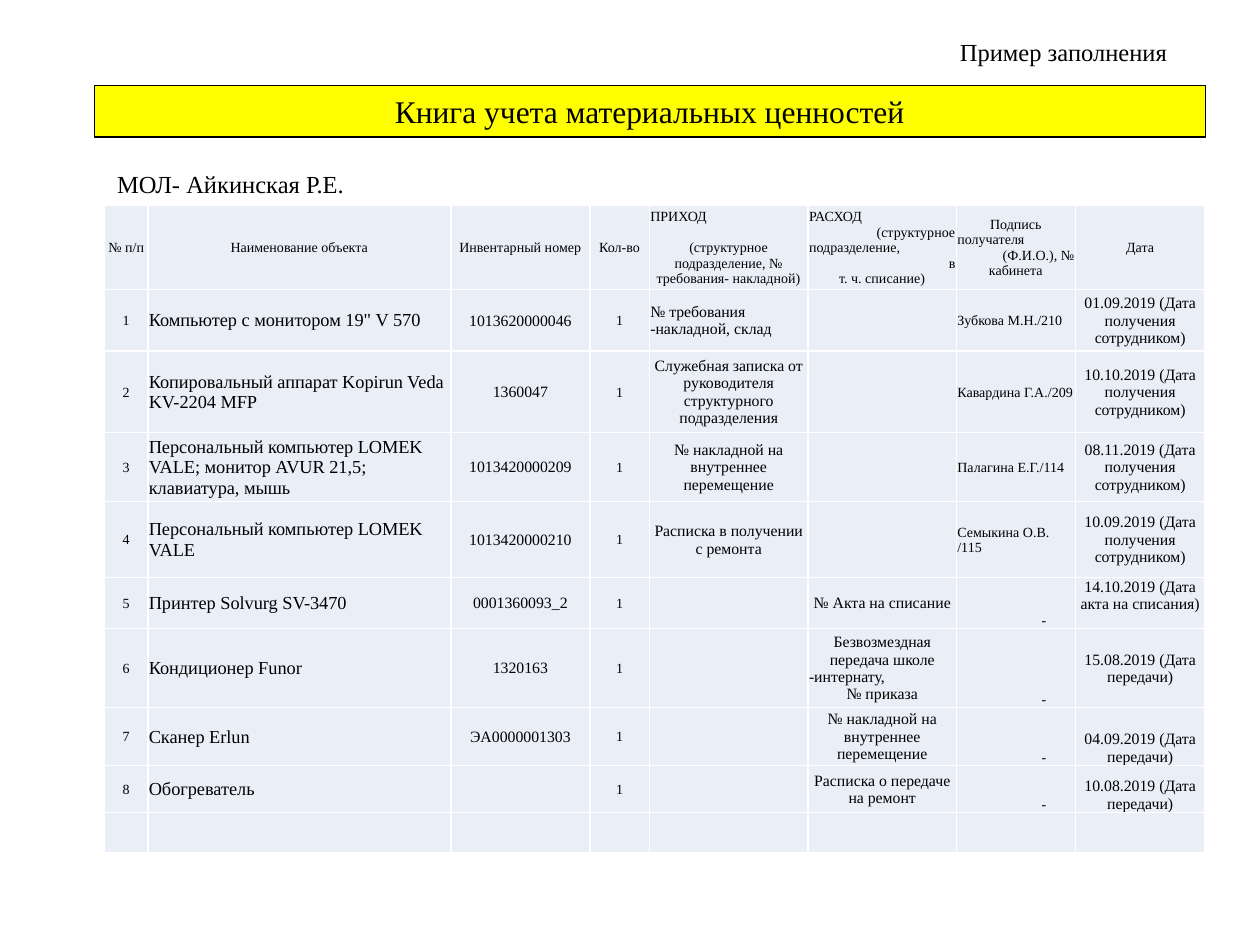
from lxml import etree
from pptx import Presentation
from pptx.dml.color import RGBColor
from pptx.enum.text import MSO_ANCHOR, MSO_AUTO_SIZE, PP_ALIGN
from pptx.oxml.ns import qn
from pptx.util import Cm, Pt

LEFT, MID, RIGHT = PP_ALIGN.LEFT, PP_ALIGN.CENTER, PP_ALIGN.RIGHT
TOP, CENTER, BOTTOM = MSO_ANCHOR.TOP, MSO_ANCHOR.MIDDLE, MSO_ANCHOR.BOTTOM
GROW, FIXED = MSO_AUTO_SIZE.SHAPE_TO_FIT_TEXT, MSO_AUTO_SIZE.NONE

# A leading mark sets the side of a line: "<" left, ">" right
SIDES = {"<": LEFT, ">": RIGHT}

COLS = [0.87, 6.11, 2.8, 1.2, 3.2, 2.99, 2.4, 2.61]
ROWS = [1.7, 1.23, 1.65, 1.39, 1.53, 1.03, 1.59, 1.17, 0.95, 0.81]
SIZES = [8, 10.5, 9, 8, 9, 9, 8, 9]
ALIGNS = [MID, LEFT, MID, MID, MID, MID, LEFT, MID]
ANCHORS = {(5, 7): TOP, (7, 7): BOTTOM, (8, 7): BOTTOM}

HEAD = [
    "№ п/п", "Наименование объекта", "Инвентарный номер", "Кол-во",
    "<ПРИХОД\n(структурное подразделение, № требования- накладной)",
    "<РАСХОД\n>(структурное\n<подразделение,\n>в\nт. ч. списание)",
    "Подпись\n<получателя\n>(Ф.И.О.), №\nкабинета",
    "Дата",
]
GOT = "(Дата получения сотрудником)"
SENT = "(Дата передачи)"
MOVE = "№ накладной на внутреннее перемещение"

# Name, inventory number, income, outgo, signature, date
ITEMS = [
    ("Компьютер с монитором 19\" V 570", "1013620000046",
     "<№ требования -накладной, склад", "", "Зубкова М.Н./210",
     f"01.09.2019 {GOT}"),
    ("Копировальный аппарат Kopirun Veda KV-2204 MFP", "1360047",
     "Служебная записка от руководителя структурного подразделения", "",
     "Кавардина Г.А./209", f"10.10.2019 {GOT}"),
    ("Персональный компьютер LOMEK VALE; монитор AVUR 21,5; клавиатура, мышь",
     "1013420000209", MOVE, "", "Палагина Е.Г./114", f"08.11.2019 {GOT}"),
    ("Персональный компьютер LOMEK VALE", "1013420000210",
     "Расписка в получении с ремонта", "", "Семыкина О.В. /115",
     f"10.09.2019 {GOT}"),
    ("Принтер Solvurg SV-3470", "0001360093_2", "", "№ Акта на списание",
     "-", "14.10.2019 (Дата акта на списания)"),
    ("Кондиционер Funor", "1320163", "",
     "Безвозмездная передача школе\n<-интернату,\n№ приказа",
     "-", f"15.08.2019 {SENT}"),
    ("Сканер Erlun", "ЭА0000001303", "", MOVE, "-", f"04.09.2019 {SENT}"),
    ("Обогреватель", "", "", "Расписка о передаче на ремонт", "-",
     f"10.08.2019 {SENT}"),
]


def paint(code):
    return RGBColor.from_string(code)


class Page:
    font = "Times New Roman"
    ink = "000000"
    pale = "EAEFF7"
    grid = "FFFFFF"
    pad = Cm(0.02)

    def __init__(self, slide):
        self.slide = slide

    def style(self, para, size, align):
        para.alignment = align
        for run in para.runs:
            run.font.name = self.font
            run.font.size = Pt(size)
            run.font.bold = False
            run.font.color.rgb = paint(self.ink)

    def title(self, text, box, fill):
        shape = self.slide.shapes.title
        shape.left, shape.top, shape.width, shape.height = map(Cm, box)
        shape.fill.solid()
        shape.fill.fore_color.rgb = paint(fill)
        shape.line.color.rgb = paint(self.ink)
        shape.line.width = Pt(0.75)
        frame = shape.text_frame
        frame.text = text
        frame.vertical_anchor = CENTER
        frame.auto_size = FIXED
        self.style(frame.paragraphs[0], 18, MID)

    def label(self, text, box, wrap):
        frame = self.slide.shapes.add_textbox(*map(Cm, box)).text_frame
        frame.text = text
        frame.word_wrap = wrap
        frame.auto_size = GROW
        para = frame.paragraphs[0]
        self.style(para, 14, LEFT)
        return para

    def table(self, data, left, top):
        frame = self.slide.shapes.add_table(
            len(ROWS), len(COLS), Cm(left), Cm(top),
            Cm(sum(COLS)), Cm(sum(ROWS)))
        table = frame.table
        table.first_row = table.horz_banding = False
        for col, width in zip(table.columns, COLS):
            col.width = Cm(width)
        for row, height in zip(table.rows, ROWS):
            row.height = Cm(height)
        for r, line in enumerate(data):
            for c, text in enumerate(line):
                size, align = (SIZES[c], ALIGNS[c]) if r else (8, MID)
                cell = table.cell(r, c)
                self.fill(cell, text, size, align)
                cell.vertical_anchor = ANCHORS.get((r, c), CENTER)
                if text == "-":
                    cell.margin_left = Cm(1.72)
                    cell.vertical_anchor = BOTTOM
        return table

    def fill(self, cell, text, size, align):
        cell.margin_left = cell.margin_right = cell.margin_top = self.pad
        cell.margin_bottom = 0
        lines = text.split("\n")
        cell.text_frame.text = "\n".join(s.lstrip("<>") for s in lines)
        for para, line in zip(cell.text_frame.paragraphs, lines):
            self.style(para, size, SIDES.get(line[:1], align))
        self.edge(cell)
        cell.fill.solid()
        cell.fill.fore_color.rgb = paint(self.pale)

    def edge(self, cell):
        props = cell._tc.get_or_add_tcPr()
        for side in ("a:lnL", "a:lnR", "a:lnT", "a:lnB"):
            line = etree.SubElement(props, qn(side), w=str(Pt(1)))
            solid = etree.SubElement(line, qn("a:solidFill"))
            etree.SubElement(solid, qn("a:srgbClr"), val=self.grid)


def main():
    deck = Presentation()
    deck.slide_width, deck.slide_height = Cm(25.4), Cm(19.05)
    page = Page(deck.slides.add_slide(deck.slide_layouts[5]))

    # Heading and person in charge
    page.title("Книга учета материальных ценностей",
               (1.9, 1.73, 22.4, 1.03), "FFFF00")
    page.label("МОЛ- Айкинская Р.Е.", (2.11, 3.28, 5.26, 0.86), False)

    # Ledger: numbered items, one piece each, and a spare row
    body = [(str(n), name, code, "1", *rest)
            for n, (name, code, *rest) in enumerate(ITEMS, 1)]
    table = page.table([HEAD, *body, [""] * len(COLS)], 2.11, 4.13)
    table.cell(0, 4).text_frame.paragraphs[1].space_before = Pt(9)

    # Corner note
    note = page.label("Пример заполнения", (19.1, 0.53, 4.8, 0.94), True)
    note.line_spacing = 1.15
    note.space_after = Pt(10)

    deck.save("out.pptx")


if __name__ == "__main__":
    main()
